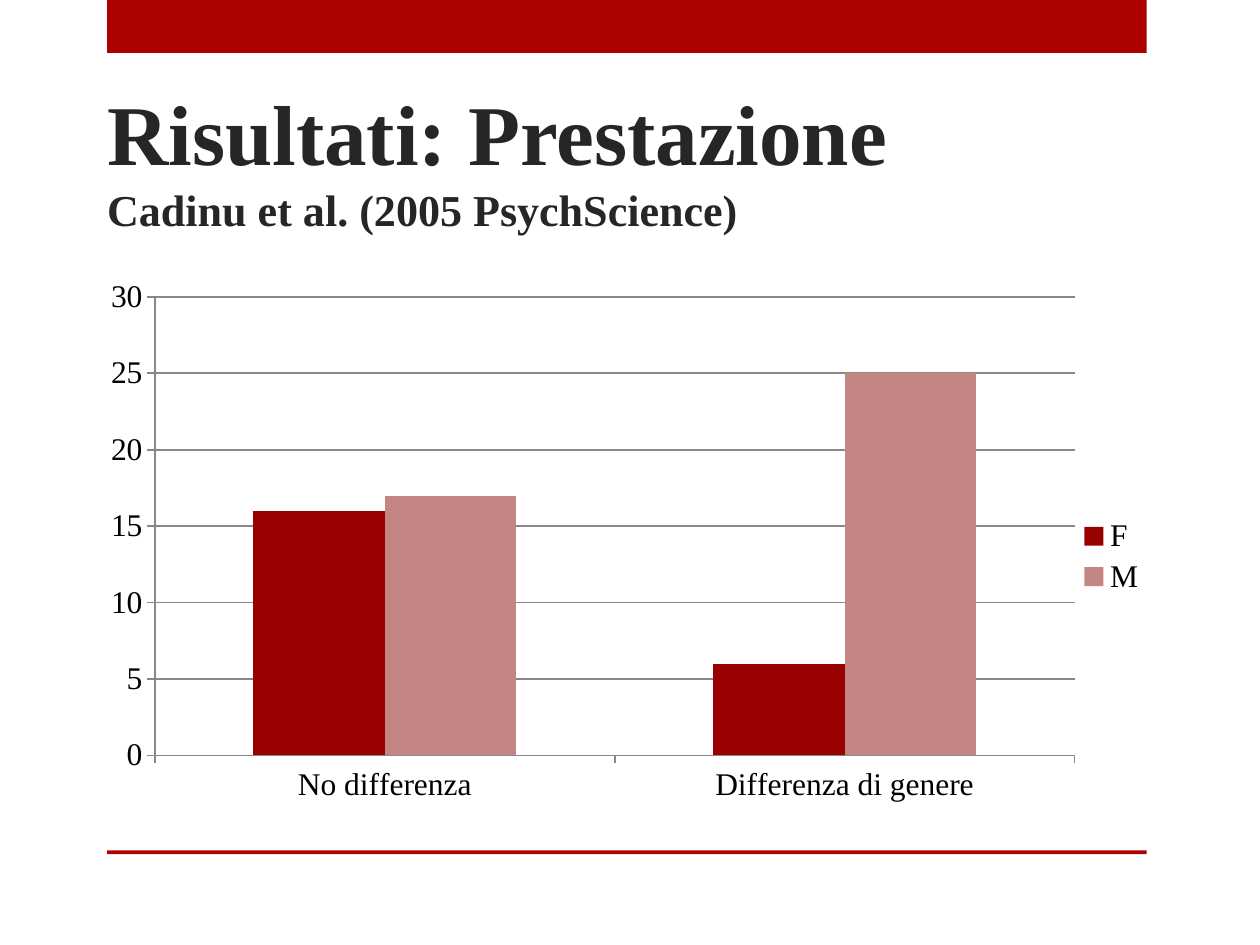
import pptx
import pptx.chart.data
import pptx.dml.color
import pptx.enum.chart
import pptx.enum.shapes
import pptx.enum.text
import pptx.oxml
import pptx.util

COLORS = {"accent": "AD0101", "title": "262626", "text": "000000",
          "axis": "888888", "F": "990000", "M": "C38685"}
FONT = "Times New Roman"


class SlideBuilder:
    """Holds the style and the current slide; lengths are shares of the slide's size."""

    def __init__(self, presentation):
        self.width = presentation.slide_width
        self.height = presentation.slide_height
        self.slide = presentation.slides.add_slide(presentation.slide_layouts[5])

    def color(self, name):
        return pptx.dml.color.RGBColor.from_string(COLORS[name])

    def box(self, left, top, width, height):
        return (round(left * self.width), round(top * self.height),
                round(width * self.width), round(height * self.height))

    def fill(self, target, name):
        target.fill.solid()
        target.fill.fore_color.rgb = self.color(name)

    def bar(self, *shares):
        shape = self.slide.shapes.add_shape(
            pptx.enum.shapes.MSO_SHAPE.RECTANGLE, *self.box(*shares))
        shape.shadow.inherit = False
        self.fill(shape, "accent")
        shape.line.fill.background()

    def title(self, lines, *shares):
        shape = self.slide.shapes.title
        shape.left, shape.top, shape.width, shape.height = self.box(*shares)
        frame = shape.text_frame
        frame.word_wrap = True
        frame.auto_size = pptx.enum.text.MSO_AUTO_SIZE.NONE
        frame.vertical_anchor = pptx.enum.text.MSO_ANCHOR.BOTTOM
        paragraph = frame.paragraphs[0]
        paragraph.alignment = pptx.enum.text.PP_ALIGN.LEFT
        for index, (text, size) in enumerate(lines):
            if index:
                paragraph.add_line_break()
            run = paragraph.add_run()
            run.text = text
            run.font.size = pptx.util.Pt(size)
            run.font.name = FONT
            run.font.bold = True
            run.font.color.rgb = self.color("title")

    def column_chart(self, categories, series_values, plot, *shares):
        data = pptx.chart.data.CategoryChartData()
        data.categories = categories
        for name, values in series_values.items():
            data.add_series(name, values)
        chart = self.slide.shapes.add_chart(
            pptx.enum.chart.XL_CHART_TYPE.COLUMN_CLUSTERED, *self.box(*shares), data).chart
        chart.has_title = False
        chart.font.name = FONT
        chart.font.size = pptx.util.Pt(18)
        chart.font.color.rgb = self.color("text")
        chart.has_legend = True
        chart.legend.position = pptx.enum.chart.XL_LEGEND_POSITION.RIGHT
        chart.legend.include_in_layout = False

        columns = chart.plots[0]
        columns.gap_width = 150
        columns.overlap = 0
        columns.vary_by_categories = False
        for series in columns.series:
            self.fill(series.format, series.name)
            series.invert_if_negative = False

        value_axis = chart.value_axis
        value_axis.minimum_scale, value_axis.maximum_scale = 0, 30
        value_axis.major_unit = 5
        value_axis.has_major_gridlines = True
        chart.category_axis.has_major_gridlines = False
        for axis in (chart.category_axis, value_axis):
            axis.major_tick_mark = pptx.enum.chart.XL_TICK_MARK.OUTSIDE
        for item in (chart.category_axis, value_axis, value_axis.major_gridlines):
            item.format.line.color.rgb = self.color("axis")
            item.format.line.width = pptx.util.Pt(1)
        self.place_plot(chart, plot)

    def place_plot(self, chart, plot):
        namespace = "http://schemas.openxmlformats.org/drawingml/2006/chart"
        modes = '<c:layoutTarget val="inner"/><c:xMode val="edge"/><c:yMode val="edge"/>'
        places = "".join(f'<c:{key} val="{value}"/>' for key, value in zip("xywh", plot))
        layout = pptx.oxml.parse_xml(
            f'<c:layout xmlns:c="{namespace}"><c:manualLayout>{modes}{places}'
            '</c:manualLayout></c:layout>')
        area = chart.plots[0]._element.getparent()
        for old in area.findall(f"{{{namespace}}}layout"):
            area.remove(old)
        area.insert(0, layout)


def main():
    presentation = pptx.Presentation()
    presentation.slide_width = pptx.util.Inches(10)
    presentation.slide_height = pptx.util.Inches(7.5)
    builder = SlideBuilder(presentation)
    builder.bar(0.085, 0, 0.825, 0.42 / 7.5)
    builder.bar(0.085, 0.9, 0.825, 0.03 / 7.5)
    builder.title([("Risultati: Prestazione", 48.6),
                   ("Cadinu et al. (2005 PsychScience)", 25.2)],
                  0.075, 0.67 / 7.5, 0.85, 1.25 / 7.5)
    builder.column_chart(["No differenza", "Differenza di genere"],
                         {"F": (16, 6), "M": (17, 25)},
                         (0.05, 0.03, 0.87, 0.83),
                         0.081, 2.22 / 7.5, 0.839, 4.39 / 7.5)
    presentation.save("out.pptx")


if __name__ == "__main__":
    main()
